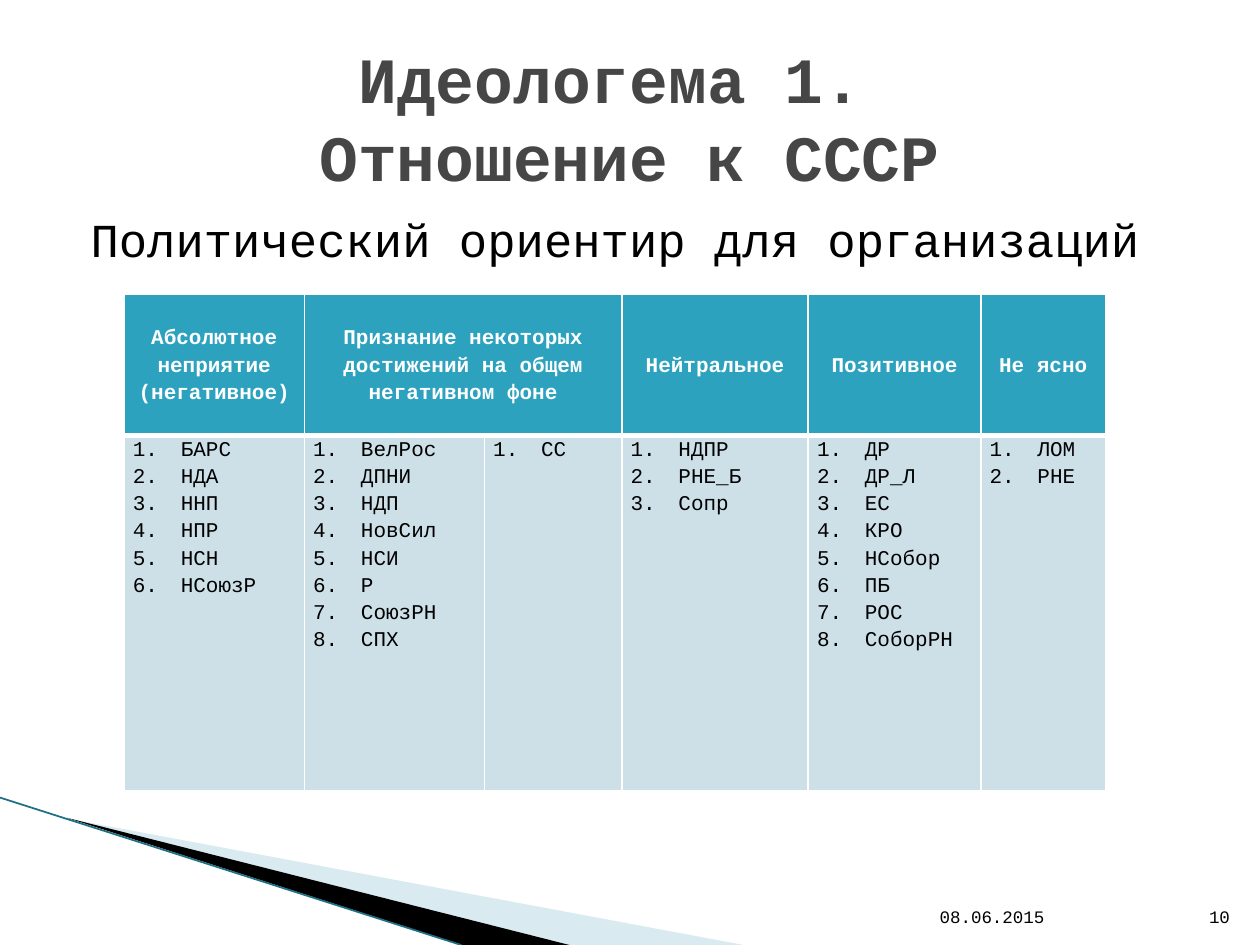
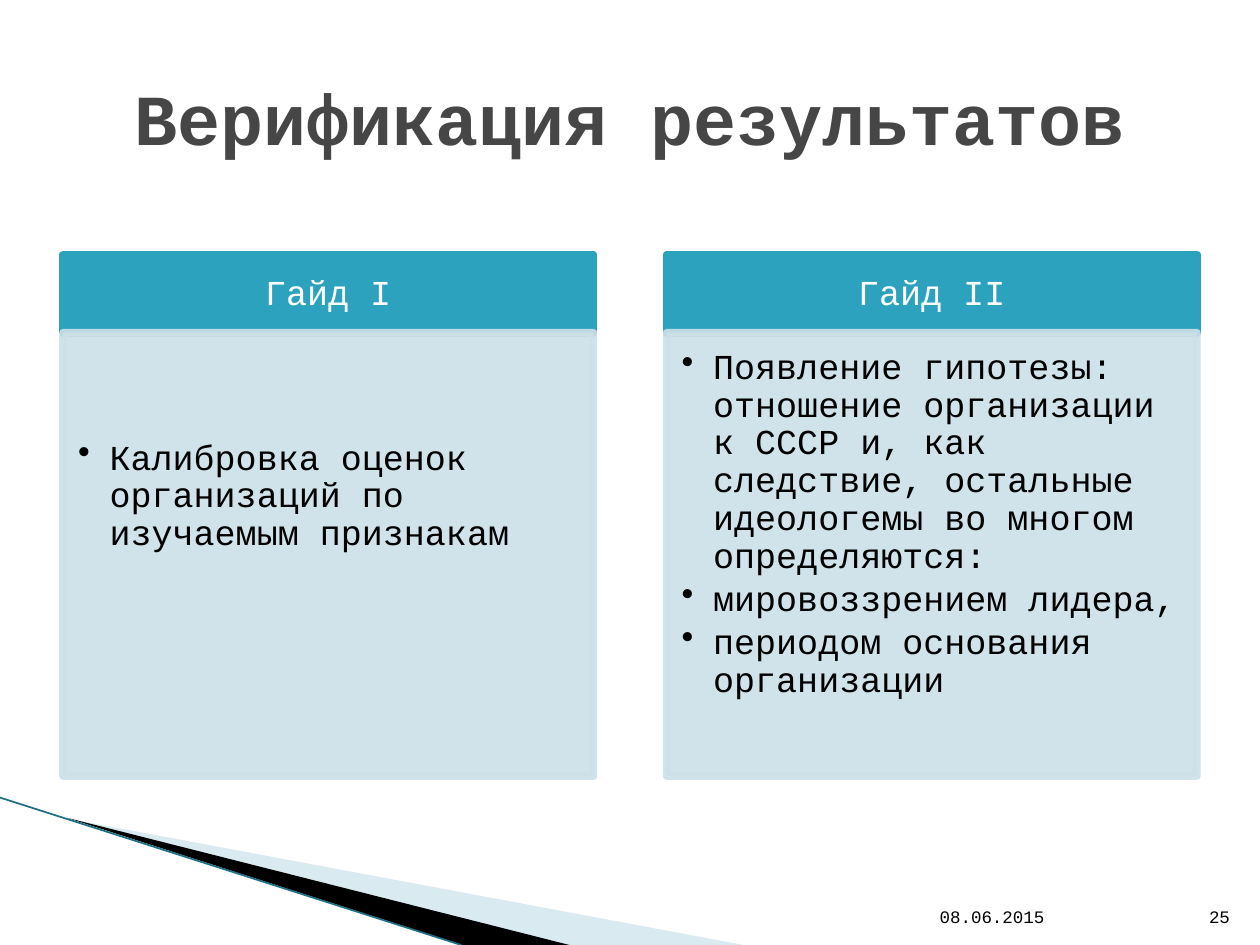
from pptx import Presentation
from pptx.dml.color import RGBColor
from pptx.enum.shapes import MSO_CONNECTOR, MSO_SHAPE
from pptx.enum.text import MSO_ANCHOR, MSO_AUTO_SIZE, PP_ALIGN
from pptx.oxml.ns import qn
from pptx.util import Inches, Pt
from lxml.etree import SubElement

FONT = "Courier New"
HUES = {"ink": "000000", "title": "464646", "head": "2DA2BF", "pale": "CDE0E8",
        "white": "FFFFFF", "wedge": "A0CBDC", "edge": "1F7085"}
COLS, ROWS = 100, 75
UNIT = Inches(0.1)
MARGIN = 5
WIDTH = COLS - 2 * MARGIN
DATE = "08.06.2015"
LEFT, CENTER, RIGHT = PP_ALIGN.LEFT, PP_ALIGN.CENTER, PP_ALIGN.RIGHT
TOP, MIDDLE, BOTTOM = MSO_ANCHOR.TOP, MSO_ANCHOR.MIDDLE, MSO_ANCHOR.BOTTOM
NUMBER = ("buAutoNum", {"type": "arabicPeriod"}, Inches(0.38))
DOT = ("buChar", {"char": "•"}, Inches(0.25))

VIEWS = [
    ("Абсолютное неприятие (негативное)",
     [["БАРС", "НДА", "ННП", "НПР", "НСН", "НСоюзР"]]),
    ("Признание некоторых достижений на общем негативном фоне",
     [["ВелРос", "ДПНИ", "НДП", "НовСил", "НСИ", "Р", "СоюзРН", "СПХ"],
      ["СС"]]),
    ("Нейтральное", [["НДПР", "РНЕ_Б", "Сопр"]]),
    ("Позитивное",
     [["ДР", "ДР_Л", "ЕС", "КРО", "НСобор", "ПБ", "РОС", "СоборРН"]]),
    ("Не ясно", [["ЛОМ", "РНЕ"]]),
]
GUIDES = [
    ("Гайд I", 7.2, ["Калибровка оценок организаций по изучаемым признакам"]),
    ("Гайд II", 0,
     ["Появление гипотезы: отношение организации к СССР и, как следствие, "
      "остальные идеологемы во многом определяются:",
      "мировоззрением лидера,", "периодом основания организации"]),
]


def grid(*cells):
    """Turn grid columns and rows into slide lengths."""
    return [round(cell * UNIT) for cell in cells]


def hue(name):
    """Look up a named colour."""
    return RGBColor.from_string(HUES[name])


def paint(item, color):
    """Fill a shape or a cell with a plain colour."""
    item.fill.solid()
    item.fill.fore_color.rgb = hue(color)


def fade(shape, share):
    """Set the opacity of a shape's colours to a percentage."""
    for tint in shape._element.spPr.iter(qn("a:srgbClr")):
        SubElement(tint, qn("a:alpha"), val=str(share * 1000))


def pad(area, sides, anchor):
    """Set the margins and anchor of a text frame or a cell."""
    (area.margin_left, area.margin_top,
     area.margin_right, area.margin_bottom) = grid(*sides)
    area.vertical_anchor = anchor


def mark(para, kind, traits, indent):
    """Give a paragraph a bullet or number with a hanging indent."""
    props = para._p.get_or_add_pPr()
    props.set("marL", str(indent))
    props.set("indent", str(-indent))
    SubElement(props, qn(f"a:{kind}"), traits)


def write(frame, lines, size, color="ink", bold=False, align=LEFT,
          space=1, after=0, bullet=None):
    """Fill a text frame with formatted paragraphs."""
    frame.word_wrap = True
    for i, line in enumerate(lines):
        para = frame.add_paragraph() if i else frame.paragraphs[0]
        if bullet:
            mark(para, *bullet)
        para.alignment = align
        para.line_spacing = space
        para.space_before, para.space_after = Pt(0), Pt(after)
        run = para.add_run()
        run.text = line
        font = run.font
        font.name, font.size, font.bold = FONT, Pt(size), bold
        font.color.rgb = hue(color)


def label(slide, box, text, anchor=TOP, **style):
    """Add a one-line text box."""
    frame = slide.shapes.add_textbox(*grid(*box)).text_frame
    frame.vertical_anchor = anchor
    write(frame, [text], **style)


def wedge(slide, points, color, share):
    """Draw one filled wedge through the given points."""
    first, *rest = [grid(*point) for point in points]
    pen = slide.shapes.build_freeform(*first)
    pen.add_line_segments(rest)
    shape = pen.convert_to_shape()
    shape.shadow.inherit = False
    shape.line.fill.background()
    paint(shape, color)
    fade(shape, share)


def corner(slide):
    """Draw the wedges and edge line in the lower left corner."""
    wedge(slide, [(5.5, 65), (59, ROWS), (45.2, ROWS)], "wedge", 40)
    wedge(slide, [(5.3, 64.9), (45.2, ROWS), (36.7, ROWS)], "ink", 100)
    edge = slide.shapes.add_connector(
        MSO_CONNECTOR.STRAIGHT, *grid(0, 63.3, 36.6, ROWS))
    edge.line.color.rgb = hue("edge")
    edge.line.width = Pt(1)
    SubElement(edge._element.spPr, qn("a:effectLst"))


def footer(slide, number):
    """Place the date and the slide number."""
    top, height = 70.1, 4
    label(slide, (73.6, top, 21, height), DATE, BOTTOM, size=10)
    label(slide, (94.6, top, 4, height), number, BOTTOM, size=10, align=RIGHT)


def start(deck, lines, size, number):
    """Add a slide with its corner, title and footer."""
    slide = deck.slides.add_slide(deck.slide_layouts[5])
    corner(slide)
    title = slide.shapes.title
    title.left, title.top, title.width, title.height = grid(MARGIN, 3, WIDTH, 12.5)
    frame = title.text_frame
    frame.auto_size = MSO_AUTO_SIZE.NONE
    frame.vertical_anchor = MIDDLE
    write(frame, lines, size, color="title", bold=True, align=CENTER)
    footer(slide, number)
    return slide


def border(cell, base):
    """Draw white cell borders with the given bottom width."""
    props = cell._tc.get_or_add_tcPr()
    for side, width in {"L": 1, "R": 1, "T": 1, "B": base}.items():
        line = SubElement(props, qn(f"a:ln{side}"), w=str(Pt(width)))
        fill = SubElement(line, qn("a:solidFill"))
        SubElement(fill, qn("a:srgbClr"), val=HUES["white"])


def entry(cell, lines, fill, base, anchor, **style):
    """Frame, fill and write one table cell."""
    border(cell, base)
    paint(cell, fill)
    pad(cell, (0.7, 0, 0.7, 0), anchor)
    write(cell.text_frame, lines, 12, space=1.15, **style)


def matrix(slide, box, widths, heights, views):
    """Place a table whose headings span their lists."""
    table = slide.shapes.add_table(len(heights), len(widths), *grid(*box)).table
    table.horz_banding = False
    for column, width in zip(table.columns, grid(*widths)):
        column.width = width
    for row, height in zip(table.rows, grid(*heights)):
        row.height = height
    first = 0
    for head, lists in views:
        last = first + len(lists) - 1
        if last > first:
            table.cell(0, first).merge(table.cell(0, last))
        entry(table.cell(0, first), [head], "head", 3, MIDDLE,
              color="white", bold=True, align=CENTER)
        for i, names in enumerate(lists, first):
            entry(table.cell(1, i), names, "pale", 1, TOP, bullet=NUMBER)
        first = last + 1


def panel(slide, box, color, share, sides, anchor):
    """Add a filled panel and return its text frame."""
    shape = slide.shapes.add_shape(MSO_SHAPE.RECTANGLE, *grid(*box))
    shape.shadow.inherit = False
    paint(shape, color)
    shape.line.color.rgb = hue(color)
    shape.line.width = Pt(4.33)
    fade(shape, share)
    pad(shape.text_frame, sides, anchor)
    return shape.text_frame


def card(slide, box, head, drop, points):
    """Place a headed card, its points lowered by some rows."""
    left, top, width, height = box
    cap = height * 0.15
    frame = panel(slide, (left, top, width, cap), "head", 100,
                  (1.6, 0.9, 1.6, 0.9), MIDDLE)
    write(frame, [head], 20, color="white", align=CENTER, space=0.9)
    frame = panel(slide, (left, top + cap, width, height - cap), "pale", 90,
                  (1.2, 1.3 + drop, 1.6, 1.7), TOP)
    write(frame, points, 20, space=0.9, after=3, bullet=DOT)


def attitude(deck):
    """Build the slide with the table of attitudes."""
    slide = start(deck, ["Идеологема 1. ", "Отношение к СССР"], 36.9, "10")
    label(slide, (MARGIN + 1.2, 16.2, WIDTH - 1.2, 6),
          "Политический ориентир для организаций", size=27)
    widths = (14.3, 14.3, 10.9, 14.8, 13.7, 9.9)
    heights = (11.2, 28.2)
    box = (9.85, 23.35, sum(widths), sum(heights))
    matrix(slide, box, widths, heights, VIEWS)


def checking(deck):
    """Build the slide with a card for each guide."""
    slide = start(deck, ["Верификация результатов"], 41, "25")
    gap = 5.8
    count = len(GUIDES)
    width = (WIDTH - gap * (count - 1)) / count
    for i, guide in enumerate(GUIDES):
        left = MARGIN + i * (width + gap)
        card(slide, (left, 20.2, width, 41.4), *guide)


def main():
    """Build and save the deck."""
    deck = Presentation()
    deck.slide_width, deck.slide_height = grid(COLS, ROWS)
    attitude(deck)
    checking(deck)
    deck.save("out.pptx")


if __name__ == "__main__":
    main()
